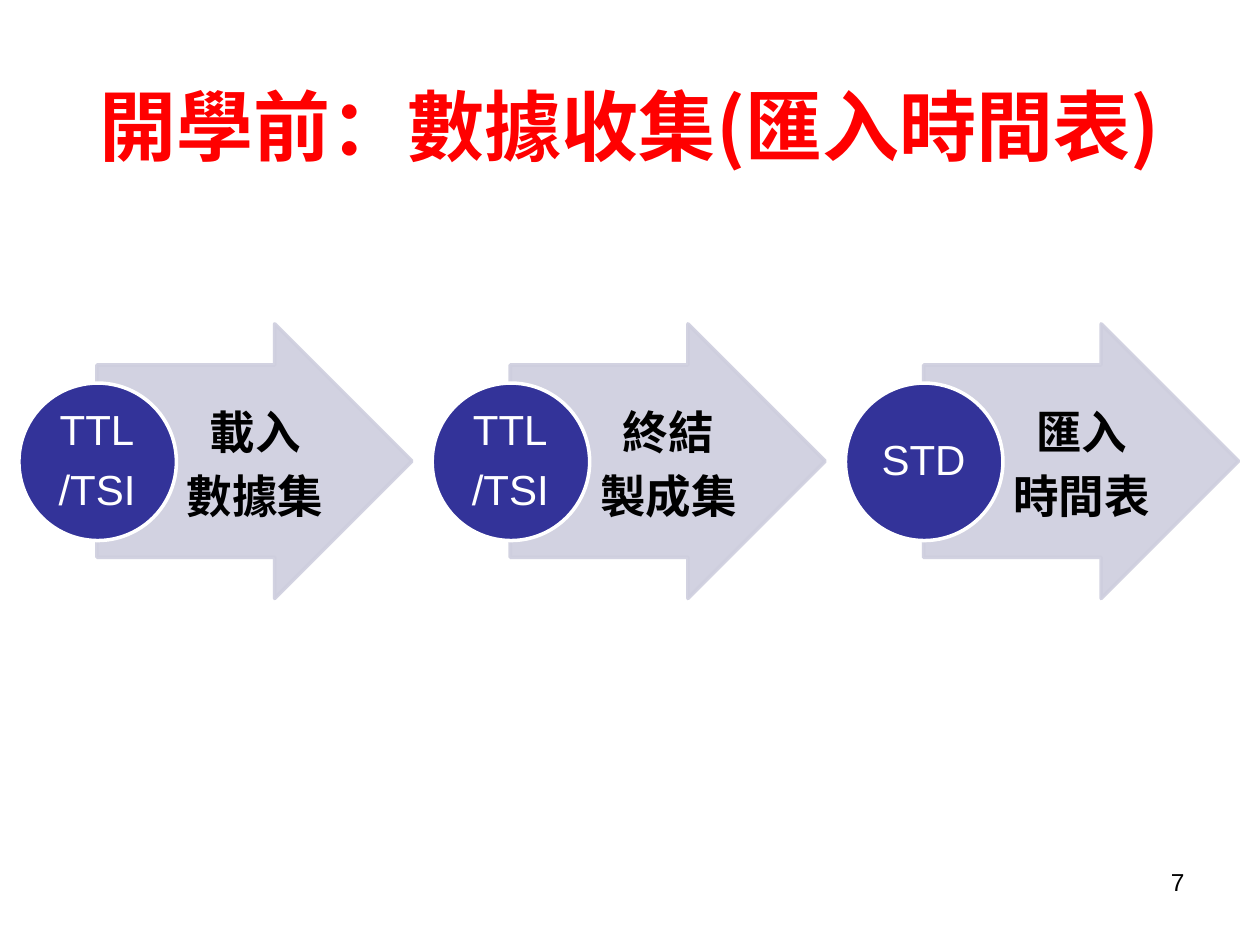
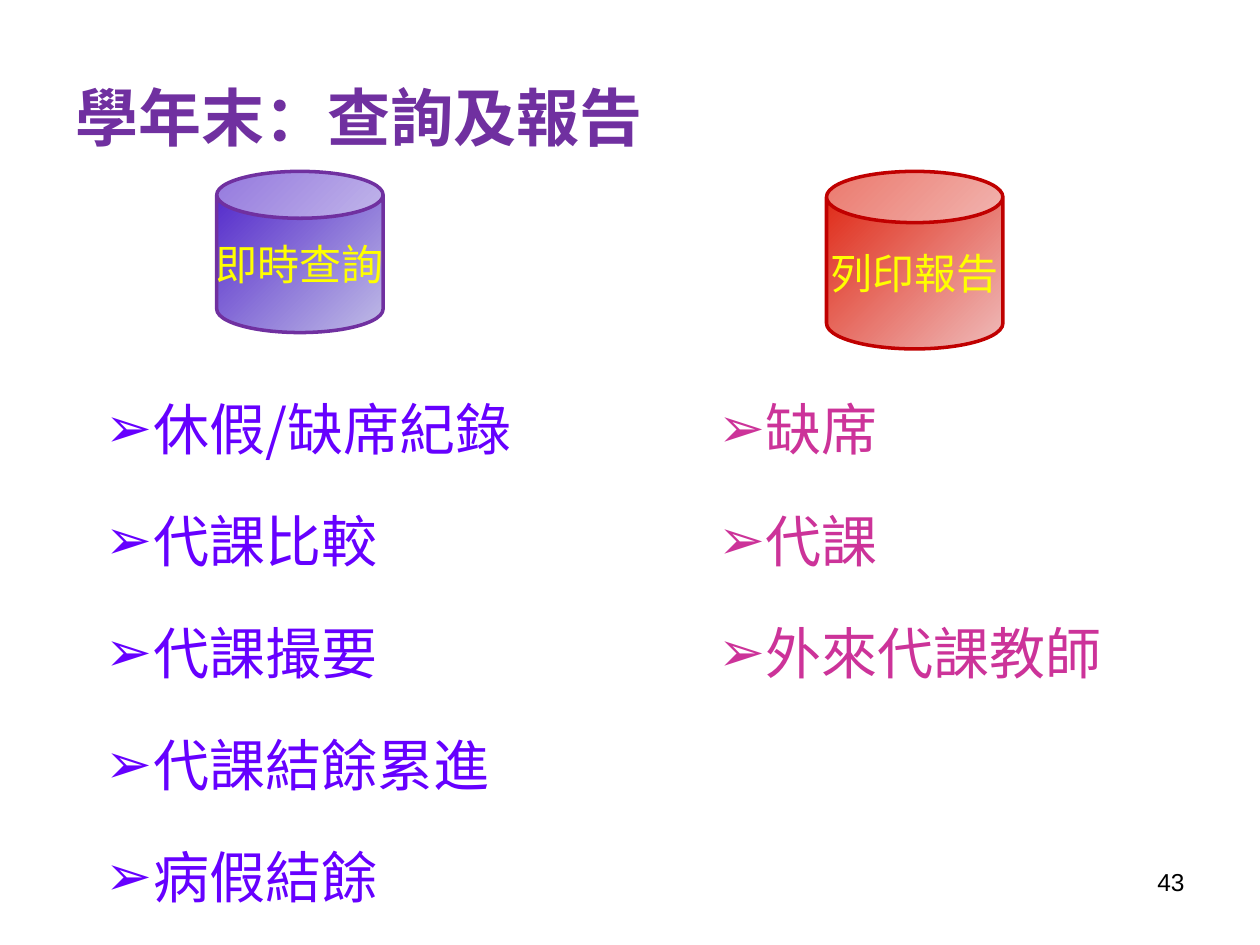
from lxml import etree
from pptx import Presentation
from pptx.dml.color import RGBColor
from pptx.enum.shapes import MSO_SHAPE
from pptx.enum.text import MSO_ANCHOR, PP_ALIGN
from pptx.oxml.ns import qn
from pptx.util import Inches, Pt

ARROW, OVAL, CAN = MSO_SHAPE.RIGHT_ARROW, MSO_SHAPE.OVAL, MSO_SHAPE.CAN
LEFT, MID, RIGHT = PP_ALIGN.LEFT, PP_ALIGN.CENTER, PP_ALIGN.RIGHT
TOP, CENTER = MSO_ANCHOR.TOP, MSO_ANCHOR.MIDDLE

RED = RGBColor(0xFF, 0x00, 0x00)
PURPLE = RGBColor(0x70, 0x30, 0xA0)
BLACK = RGBColor(0x00, 0x00, 0x00)
WHITE = RGBColor(0xFF, 0xFF, 0xFF)
YELLOW = RGBColor(0xFF, 0xFF, 0x00)
NAVY = RGBColor(0x33, 0x33, 0x99)
PALE = RGBColor(0xCE, 0xCE, 0xDE)
VIOLET = RGBColor(0x66, 0x00, 0xFF)
PINK = RGBColor(0xCC, 0x33, 0x99)
BRICK = RGBColor(0xC0, 0x00, 0x00)
BLUES = RGBColor(0x4D, 0x21, 0xC9), RGBColor(0xC0, 0xBC, 0xE6)
REDS = RGBColor(0xDE, 0x20, 0x0C), RGBColor(0xEF, 0xBC, 0xBB)

SC, TC, LATIN = "Noto Sans CJK SC", "Noto Sans CJK TC", "Arial"

# Content
STEPS = [
    (["TTL", "/TSI"], ["載入", "數據集"]),
    (["TTL", "/TSI"], ["終結", "製成集"]),
    (["STD"], ["匯入", "時間表"]),
]
STEP_X, STEP_GAP = 0.15, 3.28

# Each topic: can label, can box, gradient, edge, list box, list colour, items
TOPICS = [
    ("即時查詢", (1.72, 1.36, 1.32, 1.28), BLUES, PURPLE,
     (0.74, 2.77, 3.7, 3.6), VIOLET,
     ["休假/缺席紀錄", "代課比較", "代課撮要", "代課結餘累進", "病假結餘"]),
    ("列印報告", (6.56, 1.36, 1.4, 1.41), REDS, BRICK,
     (5.6, 2.77, 3.71, 3.44), PINK,
     ["缺席", "代課", "外來代課教師"]),
]


def inches(box):
    return [Inches(n) for n in box]


def add_bullet(par):
    prop = par._p.get_or_add_pPr()
    prop.set("marL", str(Inches(0.38)))
    prop.set("indent", str(-Inches(0.38)))
    etree.SubElement(prop, qn("a:buFont")).set("typeface", LATIN)
    etree.SubElement(prop, qn("a:buChar")).set("char", "➢")


def write(frame, lines, size, face, color, align=MID, bold=False,
          pitch=None, gap=0, bullet=False):
    """Fill a frame; pitch is the line height and gap the space between."""
    for i, line in enumerate(lines):
        par = frame.add_paragraph() if i else frame.paragraphs[0]
        par.text = line
        par.alignment = align
        if bullet:
            add_bullet(par)
        if pitch:
            par.line_spacing = Pt(pitch)
        par.space_before = Pt(gap if i else 0)
        font = par.font
        font.size, font.name, font.bold = Pt(size), face, bold
        font.color.rgb = color
        base = par._p.pPr.find(qn("a:defRPr"))
        etree.SubElement(base, qn("a:ea")).set("typeface", face)


def add_text(slide, box, lines, size, face, color, anchor=TOP, pad=None, **look):
    frame = slide.shapes.add_textbox(*inches(box)).text_frame
    frame.word_wrap = True
    frame.vertical_anchor = anchor
    if pad:
        (frame.margin_left, frame.margin_top,
         frame.margin_right, frame.margin_bottom) = inches(pad)
    write(frame, lines, size, face, color, **look)


def add_form(slide, kind, box, edge, fill=None):
    form = slide.shapes.add_shape(kind, *inches(box))
    form.shadow.inherit = False
    form.line.color.rgb = edge
    form.line.width = Pt(2)
    if fill is not None:
        form.fill.solid()
        form.fill.fore_color.rgb = fill
    return form


def fade(form, percent):
    for tint in form._element.spPr.iter(qn("a:srgbClr")):
        etree.SubElement(tint, qn("a:alpha")).set("val", str(percent * 1000))


def add_slide(deck, title, size, color, align, number, pitch=None):
    slide = deck.slides.add_slide(deck.slide_layouts[5])
    head = slide.shapes.title
    head.left, head.top, head.width, head.height = inches((0.5, 0.3, 9, 1.25))
    frame = head.text_frame
    frame.word_wrap = True
    frame.vertical_anchor = CENTER
    if pitch:
        frame.margin_top = Inches(0.18)
    write(frame, [title], size, SC, color, align, True, pitch)
    add_text(slide, (7.17, 6.83, 2.33, 0.52), [number], 14, LATIN, BLACK,
             align=RIGHT)
    return slide


def add_step(slide, x, codes, task):
    arrow = add_form(slide, ARROW, (x + 0.62, 2.57, 2.5, 2.18), PALE, PALE)
    arrow.adjustments[0], arrow.adjustments[1] = 0.7, 0.5
    fade(arrow, 90)
    add_text(slide, (x + 1.25, 2.9, 1.22, 1.53), task, 26, TC, BLACK, CENTER,
             (0.07, 0.02, 0.04, 0.02), bold=True, pitch=33, gap=4)
    add_form(slide, OVAL, (x, 3.04, 1.25, 1.25), WHITE, NAVY)
    add_text(slide, (x + 0.18, 3.22, 0.88, 0.88), codes, 24, LATIN, WHITE,
             CENTER, (0.02,) * 4, pitch=26, gap=8)


def add_topic(slide, label, box, shades, edge, area, color, items):
    add_text(slide, area, items, 32, TC, color, align=LEFT, pitch=61, gap=3,
             bullet=True)
    can = add_form(slide, CAN, box, edge)
    can.adjustments[0] = 0.291
    can.fill.gradient()
    can.fill.gradient_angle = 315
    for i, stop in enumerate(can.fill.gradient_stops):
        stop.position = i
        stop.color.rgb = shades[i]
    frame = can.text_frame
    frame.word_wrap = False
    frame.vertical_anchor = CENTER
    write(frame, [label], 24, SC, YELLOW)


def main():
    deck = Presentation()
    deck.slide_width, deck.slide_height = Inches(10), Inches(7.5)

    # Timetable import steps
    slide = add_slide(deck, "開學前：數據收集(匯入時間表)", 44, RED, MID, "7", 52.5)
    for i, (codes, task) in enumerate(STEPS):
        add_step(slide, STEP_X + i * STEP_GAP, codes, task)

    # Enquiries and reports
    slide = add_slide(deck, "學年末：查詢及報告", 36, PURPLE, LEFT, "43")
    for topic in TOPICS:
        add_topic(slide, *topic)

    deck.save("out.pptx")


if __name__ == "__main__":
    main()
